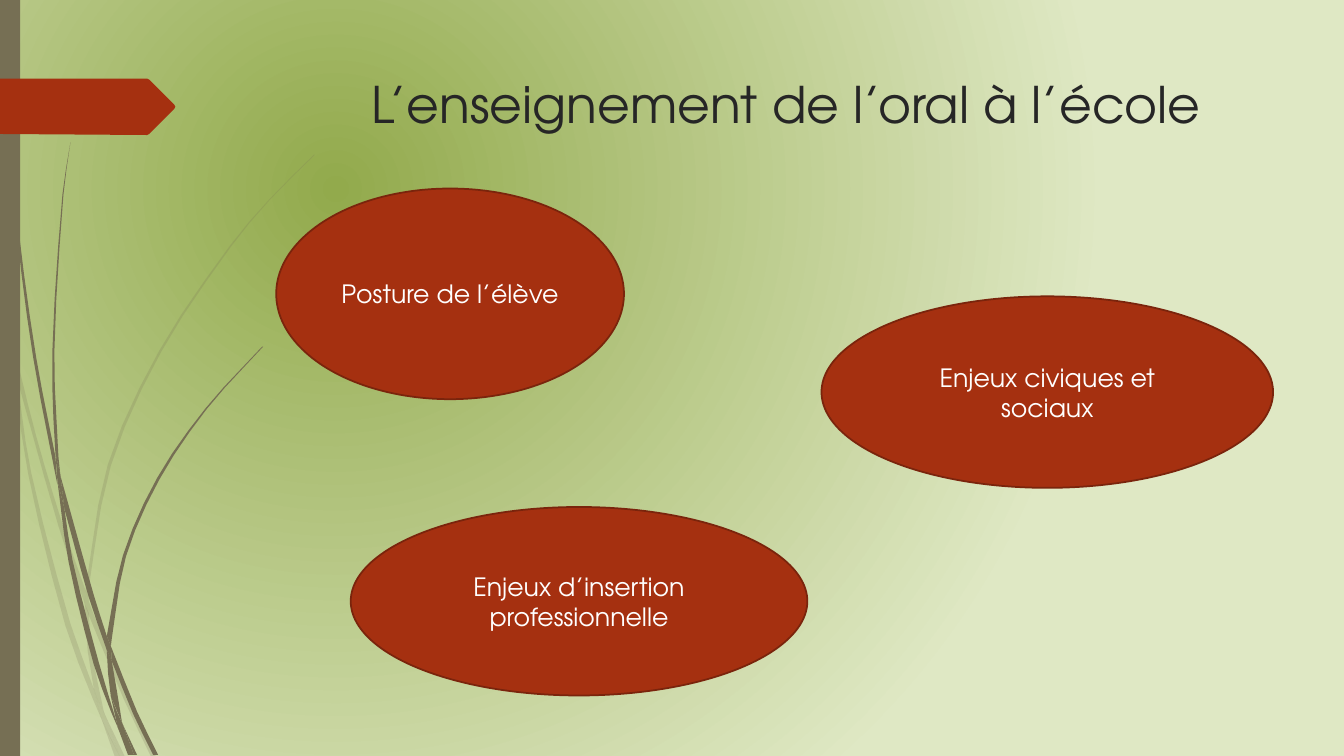
from math import dist
from lxml.etree import SubElement
from pptx import Presentation
from pptx.dml.color import RGBColor
from pptx.enum.shapes import MSO_SHAPE
from pptx.enum.text import MSO_ANCHOR, PP_ALIGN
from pptx.oxml.ns import qn
from pptx.util import Pt

FONT = "TeX Gyre Adventor"
COLORS = {"glow": "92AA4C", "pale": "DFE8C4", "stem": "766F54", "rust": "A53010",
          "rim": "7A240C", "title": "262626", "white": "FFFFFF"}
TITLE = ("L’enseignement de l’oral à l’école", (258.48, 48.96, 657.36, 59.04))
BUBBLES = [
    ("Posture de l’élève", (197.28, 134.64, 248.4, 150.48)),
    ("Enjeux civiques et sociaux", (586.8, 211.68, 322.56, 136.8)),
    ("Enjeux d’insertion professionnelle", (250.56, 362.16, 326.16, 134.64)),
]
UNIT = 0.72
STEP_LENGTH = 40
MAX_STEPS = 3
FADED_GRASS = [
    ([(0, 282), (9, 322), (11, 350)], [(0, 299), (10, 344)]),
    ([(17, 376), (58, 522), (84, 599)], [(14, 345), (36, 433), (62, 520), (85, 586)]),
    ([(88, 610), (123, 694), (150, 751)], [(88, 596), (92, 607), (127, 692), (155, 751)]),
    ([(105, 711), (119, 751)], [(124, 751)]),
    ([(11, 350), (28, 470), (65, 621), (92, 693), (101, 714)],
     [(17, 376), (31, 469), (70, 619), (93, 683), (99, 707)]),
    ([(84, 599), (87, 646), (93, 683), (96, 692), (105, 711)],
     [(88, 608), (91, 646), (103, 706)]),
    ([(85, 586), (85, 584), (107, 461), (158, 348), (228, 244), (268, 197), (312, 153)],
     [(88, 596), (88, 584), (110, 462), (160, 349), (229, 245), (268, 198), (312, 154)]),
    ([(101, 714), (114, 751)], [(119, 751)]),
    ([(85, 586), (84, 599)], [(88, 596), (88, 610)]),
    ([(93, 683), (99, 707), (101, 714), (119, 751)], [(96, 692), (105, 711)]),
]
DARK_GRASS = [
    ([(3, 0), (7, 110), (17, 233), (33, 355), (57, 481)],
     [(4, 0), (8, 109), (19, 232), (36, 355), (55, 453)]),
    ([(64, 505), (88, 592), (106, 645)], [(60, 472), (93, 590), (106, 631)]),
    ([(111, 656), (132, 708), (152, 749)], [(110, 641), (136, 706), (157, 749)]),
    ([(57, 477), (68, 557), (93, 659), (111, 708), (117, 722)],
     [(64, 505), (72, 556), (98, 657), (116, 717)]),
    ([(70, 141), (62, 193), (52, 349), (55, 449), (60, 472)],
     [(70, 141), (63, 193), (54, 349), (58, 453)]),
    ([(122, 719), (133, 749)], [(136, 749)]),
    ([(55, 449), (57, 477), (64, 505)], [(60, 472)]),
    ([(106, 631), (122, 551), (156, 474), (204, 405), (260, 344)],
     [(110, 641), (111, 633), (125, 552), (158, 476), (205, 406), (261, 344)]),
    ([(117, 722), (127, 749)], [(131, 749)]),
    ([(106, 645), (110, 691), (122, 719)], [(109, 651), (111, 656), (121, 716)]),
    ([(106, 631), (106, 645)], [(110, 641), (111, 656)]),
    ([(110, 691), (117, 722), (130, 749)], [(116, 706), (122, 719), (133, 749)]),
]
ARROW = [(0, 78), (146, 78), (148, 79), (173, 104), (174, 106), (173, 108), (148, 133), (146, 134), (0, 133)]


def rgb(name):
    return RGBColor.from_string(COLORS[name])


def paint(sp, fill, line=None):
    sp.shadow.inherit = False
    sp.fill.solid()
    sp.fill.fore_color.rgb = rgb(fill)
    if line:
        sp.line.color.rgb = rgb(line)
        sp.line.width = Pt(1.25)
    else:
        sp.line.fill.background()


def smooth(edge):
    gaps = [dist(a, b) for a, b in zip(edge, edge[1:])]
    last = len(edge) - 1
    if last < 2:
        return edge
    slopes = []
    for i in range(last + 1):
        lo, hi = max(i - 1, 0), min(i + 1, last)
        slopes.append([(b - a) / sum(gaps[lo:hi]) for a, b in zip(edge[lo], edge[hi])])
    points = [edge[0]]
    for i, gap in enumerate(gaps):
        steps = min(1 + int(gap // STEP_LENGTH), MAX_STEPS)
        for step in range(1, steps + 1):
            t = step / steps
            points.append(tuple(
                a * (1 + 2 * t) * (1 - t) ** 2 + b * t * t * (3 - 2 * t)
                + gap * t * (1 - t) * (m * (1 - t) - n * t)
                for a, b, m, n in zip(edge[i], edge[i + 1], slopes[i], slopes[i + 1])))
    return points


def draw_outline(s, points, color):
    pts = [(Pt(x * UNIT), Pt(y * UNIT)) for x, y in points]
    builder = s.shapes.build_freeform(*pts[0], scale=1.0)
    builder.add_line_segments(pts[1:], close=True)
    sp = builder.convert_to_shape()
    paint(sp, color)
    return sp


def write(sp, text, size, color, align, anchor):
    tf = sp.text_frame
    tf.word_wrap = True
    tf.vertical_anchor = anchor
    p = tf.paragraphs[0]
    p.text = text
    p.alignment = align
    p.font.name = FONT
    p.font.size = Pt(size)
    p.font.color.rgb = rgb(color)


def draw_background(s):
    fill = s.background.fill
    fill.gradient()
    for stop, name in zip(fill.gradient_stops, ("glow", "pale")):
        stop.color.rgb = rgb(name)
    grad = s.element.find(".//" + qn("a:gradFill"))
    grad.remove(grad.find(qn("a:lin")))
    circle = SubElement(grad, qn("a:path"), {"path": "circle"})
    SubElement(circle, qn("a:fillToRect"), {"l": "50000", "t": "50000", "r": "100000", "b": "100000"})


def main():
    prs = Presentation()
    prs.slide_width, prs.slide_height = Pt(960), Pt(540)
    s = prs.slides.add_slide(prs.slide_layouts[6])
    draw_background(s)

    for blades, alpha in ((FADED_GRASS, 20), (DARK_GRASS, 100)):
        for left, right in blades:
            sp = draw_outline(s, smooth(left) + smooth(right)[::-1], "stem")
            if alpha < 100:
                color = sp.element.spPr.find(qn("a:solidFill"))[0]
                SubElement(color, qn("a:alpha"), {"val": str(alpha * 1000)})

    band = s.shapes.add_shape(MSO_SHAPE.RECTANGLE, 0, 0, Pt(14.4), prs.slide_height)
    paint(band, "stem")
    draw_outline(s, ARROW, "rust")

    text, box = TITLE
    title = s.shapes.add_textbox(*map(Pt, box))
    write(title, text, 36, "title", PP_ALIGN.LEFT, MSO_ANCHOR.TOP)

    for text, box in BUBBLES:
        sp = s.shapes.add_shape(MSO_SHAPE.OVAL, *map(Pt, box))
        paint(sp, "rust", "rim")
        write(sp, text, 18, "white", PP_ALIGN.CENTER, MSO_ANCHOR.MIDDLE)

    prs.save("out.pptx")


if __name__ == "__main__":
    main()
